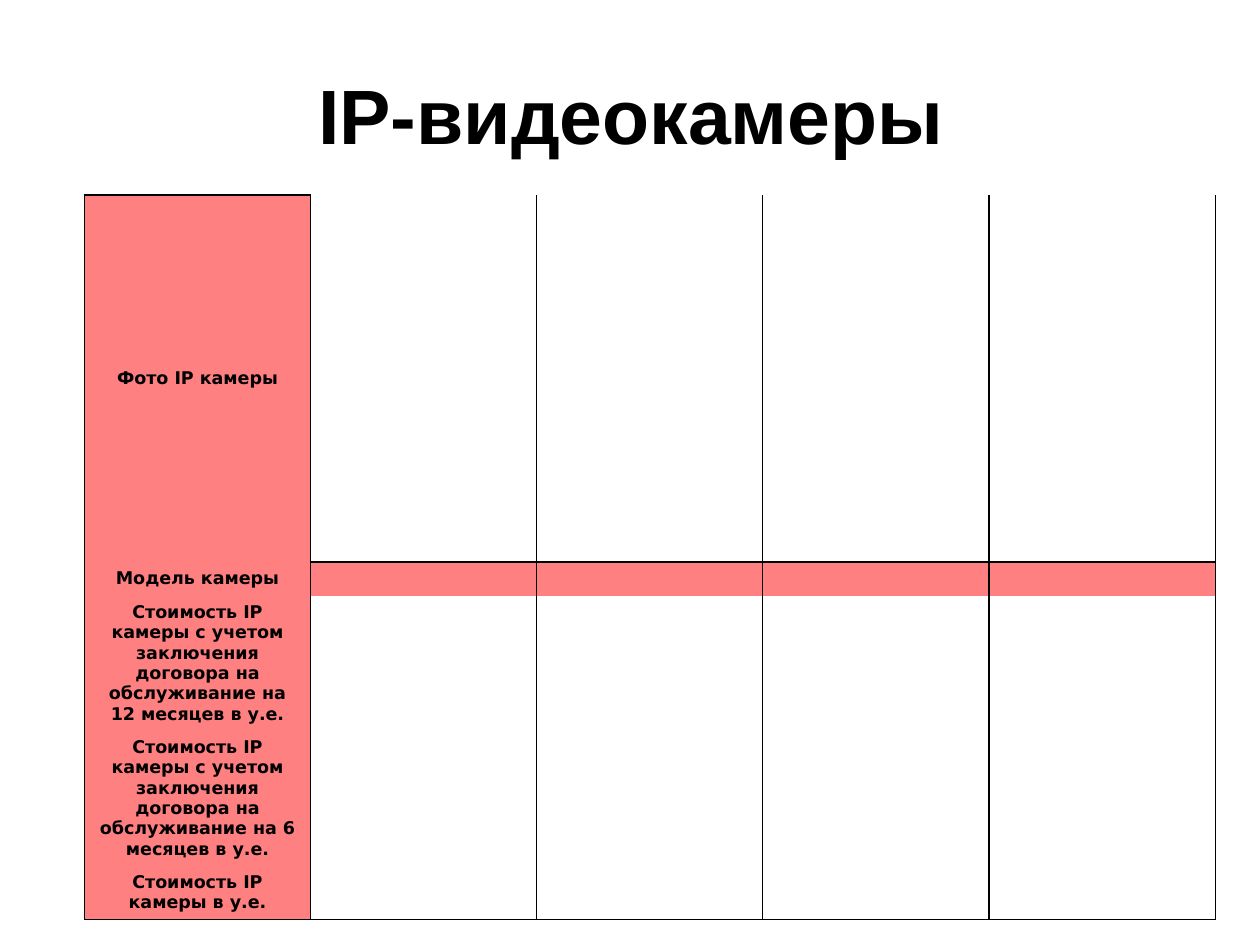
import dataclasses

import lxml.etree
import pptx
import pptx.dml.color
import pptx.enum.text
import pptx.oxml.ns
import pptx.util
from pptx.util import Cm


@dataclasses.dataclass(frozen=True)
class Theme:
    ink: str = "000000"
    accent: str = "FF8080"
    title_font: str = "Arial"
    table_font: str = "DejaVu Sans"
    title_size: int = 44
    table_size: int = 10
    border: float = 0.75


THEME = Theme()
ROWS = [
    ("Фото IP камеры", 7.4),
    ("Модель камеры", 0.68),
    ("Стоимость IP камеры с учетом заключения договора на обслуживание на 12 месяцев в у.е.", 2.72),
    ("Стоимость IP камеры с учетом заключения договора на обслуживание на 6 месяцев в у.е.", 2.72),
    ("Стоимость IP камеры в у.е.", 1.07),
]
PHOTO_ROW, MODEL_ROW, LAST_ROW = 0, 1, len(ROWS) - 1
COLUMNS = 5
COLUMN_WIDTH = 4.56


def set_all(obj, values):
    for name, value in values.items():
        setattr(obj, name, value)


def write(tf, text, font, size):
    tf.word_wrap = True
    tf.vertical_anchor = pptx.enum.text.MSO_ANCHOR.MIDDLE
    p = tf.paragraphs[0]
    p.alignment = pptx.enum.text.PP_ALIGN.CENTER
    r = p.add_run()
    r.text = text
    set_all(r.font, {"name": font, "size": pptx.util.Pt(size), "bold": True})
    r.font.color.rgb = pptx.dml.color.RGBColor.from_string(THEME.ink)


def add_title(s, text):
    sp = s.shapes.title
    set_all(sp, {"left": Cm(1.3), "top": Cm(0.71),
                 "width": Cm(22.86), "height": Cm(3.18)})
    write(sp.text_frame, text, THEME.title_font, THEME.title_size)


def add_child(parent, tag, **attributes):
    return lxml.etree.SubElement(parent, pptx.oxml.ns.qn(tag), attributes)


def set_borders(cell, visible):
    """Draw the sides named in visible (L, R, T, B) and clear the others."""
    tc_pr = cell._tc.get_or_add_tcPr()
    for side in "LRTB":
        if side in visible:
            width = pptx.util.Pt(THEME.border)
            ln = add_child(tc_pr, f"a:ln{side}", w=str(width))
            add_child(add_child(ln, "a:solidFill"), "a:srgbClr", val=THEME.ink)
        else:
            ln = add_child(tc_pr, f"a:ln{side}", w="0")
            add_child(ln, "a:noFill")


def visible_sides(row, col):
    sides = "LR"
    if (row == PHOTO_ROW and col == 0) or (row == MODEL_ROW and col > 0):
        sides += "T"
    if (row == PHOTO_ROW and col > 0) or row == LAST_ROW:
        sides += "B"
    return sides


def format_cell(cell, row, col):
    set_borders(cell, visible_sides(row, col))
    if col == 0 or row == MODEL_ROW:
        cell.fill.solid()
        cell.fill.fore_color.rgb = pptx.dml.color.RGBColor.from_string(THEME.accent)
    else:
        cell.fill.background()
    if col == 0:
        write(cell.text_frame, ROWS[row][0], THEME.table_font, THEME.table_size)
        cell.vertical_anchor = pptx.enum.text.MSO_ANCHOR.MIDDLE
    else:
        # An empty cell keeps the small type size, so that its row stays low.
        add_child(cell.text_frame.paragraphs[0]._p, "a:endParaRPr",
                  sz=str(THEME.table_size * 100))


def add_camera_table(s):
    height = sum(h for _, h in ROWS)
    table = s.shapes.add_table(len(ROWS), COLUMNS, Cm(1.7), Cm(3.93),
                               Cm(COLUMN_WIDTH * COLUMNS), Cm(height)).table
    set_all(table, {"first_row": False, "horz_banding": False})
    for column in table.columns:
        column.width = Cm(COLUMN_WIDTH)
    for row, (_, row_height) in enumerate(ROWS):
        table.rows[row].height = Cm(row_height)
        for col in range(COLUMNS):
            format_cell(table.cell(row, col), row, col)


def main():
    prs = pptx.Presentation()
    set_all(prs, {"slide_width": Cm(25.4), "slide_height": Cm(19.05)})
    s = prs.slides.add_slide(prs.slide_layouts.get_by_name("Title Only"))
    add_title(s, "IP-видеокамеры")
    add_camera_table(s)
    prs.save("out.pptx")


if __name__ == "__main__":
    main()
